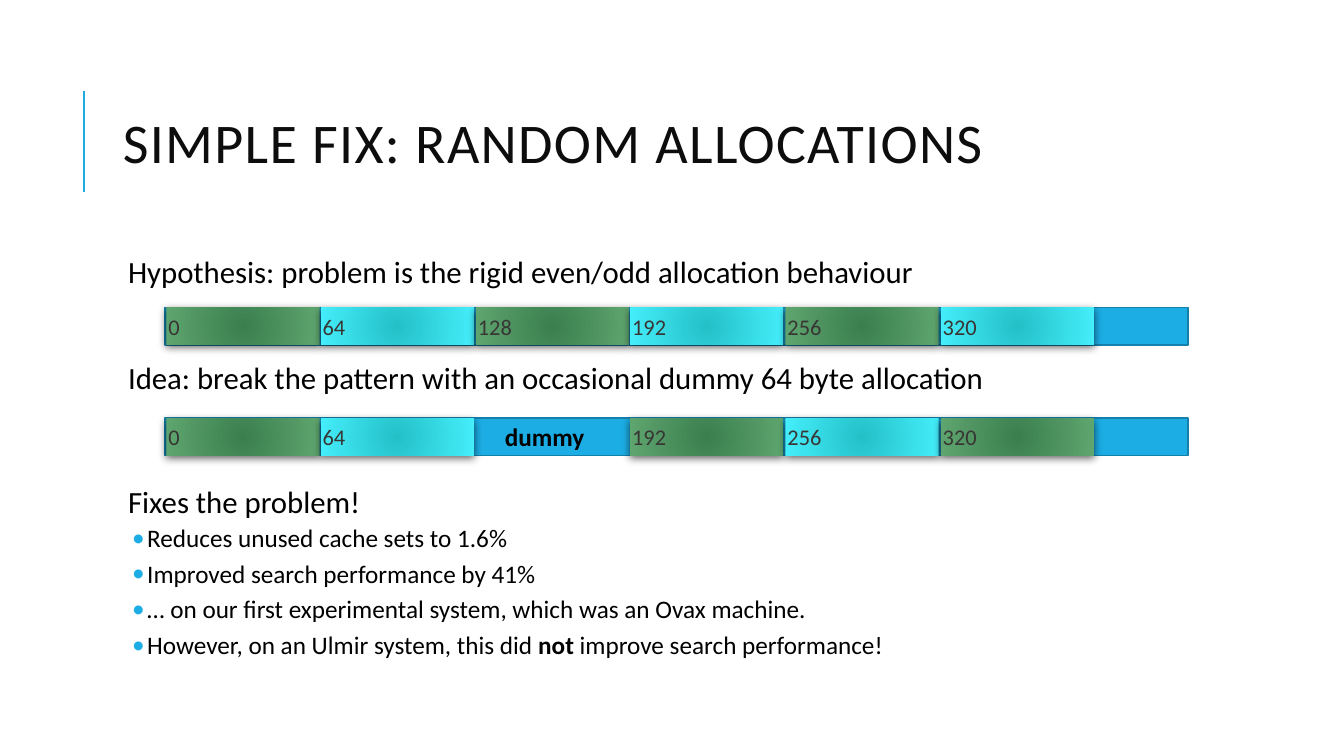
from dataclasses import dataclass
from itertools import cycle

from lxml import etree
from pptx import Presentation
from pptx.dml.color import RGBColor
from pptx.enum.shapes import MSO_CONNECTOR, MSO_SHAPE
from pptx.enum.text import MSO_ANCHOR, PP_ALIGN
from pptx.oxml import parse_xml
from pptx.oxml.ns import qn
from pptx.util import Pt

PX = 9144
STRAIGHT = MSO_CONNECTOR.STRAIGHT
RECTANGLE = MSO_SHAPE.RECTANGLE
MIDDLE = MSO_ANCHOR.MIDDLE
TOP = MSO_ANCHOR.TOP
LEFT = PP_ALIGN.LEFT
DRAWING = 'xmlns:a="http://schemas.openxmlformats.org/drawingml/2006/main"'


@dataclass(frozen=True)
class Theme:
    font: str = "Calibri"
    accent: str = "1CADE4"
    bar_line: str = "1580A9"
    title: str = "0D0D0D"
    body: str = "000000"
    label: str = "383635"
    even: tuple = ("3A7F4D", "5FA56F")
    odd: tuple = ("24C0C8", "44EEFA")
    title_size: int = 40
    statement_size: int = 22
    bullet_size: int = 18
    label_size: int = 16


THEME = Theme()


def px(*lengths):
    return [length * PX for length in lengths]


def style_runs(paragraph, size, color, bold=False):
    for run in paragraph.runs:
        run.font.name = THEME.font
        run.font.size = Pt(size)
        run.font.bold = bold
        run.font.color.rgb = RGBColor.from_string(color)


def set_margins(frame, left, top, right, bottom):
    frame.margin_left, frame.margin_top, frame.margin_right, frame.margin_bottom = px(
        left, top, right, bottom
    )


def add_text_box(slide, box, anchor=TOP):
    frame = slide.shapes.add_textbox(*px(*box)).text_frame
    frame.word_wrap = True
    frame.vertical_anchor = anchor
    return frame


def add_title(slide, box, text):
    left, top, width, height = box
    rule = slide.shapes.add_connector(
        STRAIGHT, *px(left - 29, top + 126, left - 29, top + 26)
    )
    rule.line.color.rgb = RGBColor.from_string(THEME.accent)
    rule.line.width = Pt(1.5)
    etree.SubElement(rule._element.spPr, qn("a:effectLst"))

    frame = add_text_box(slide, box, MIDDLE)
    frame.text = text
    paragraph = frame.paragraphs[0]
    paragraph.line_spacing = 0.8
    style_runs(paragraph, THEME.title_size, THEME.title)
    for run in paragraph.runs:
        run.font._element.set("spc", "100")


def set_indent(paragraph, margin, indent):
    properties = paragraph._p.get_or_add_pPr()
    properties.set("marL", str(margin * PX))
    properties.set("indent", str(indent * PX))
    return properties


def add_bullet(frame, pieces):
    paragraph = frame.add_paragraph()
    for piece in pieces:
        run = paragraph.add_run()
        run.text = piece
    style_runs(paragraph, THEME.bullet_size, THEME.body)
    for run in paragraph.runs[1::2]:
        run.font.bold = True
    paragraph.line_spacing = 0.9
    paragraph.space_before = Pt(2)
    paragraph.space_after = Pt(4)
    properties = set_indent(paragraph, 29, -15)
    color = etree.SubElement(properties, qn("a:buClr"))
    etree.SubElement(color, qn("a:srgbClr"), val=THEME.accent)
    etree.SubElement(properties, qn("a:buFont"), typeface=THEME.font)
    etree.SubElement(properties, qn("a:buChar"), char="•")


def add_statement(slide, box, text, bullets=()):
    frame = add_text_box(slide, box)
    set_margins(frame, 5, 5, 5, 5)
    frame.text = text
    paragraph = frame.paragraphs[0]
    paragraph.line_spacing = 0.9
    paragraph.space_after = Pt(2)
    set_indent(paragraph, 10, 0)
    style_runs(paragraph, THEME.statement_size, THEME.body)
    for pieces in bullets:
        add_bullet(frame, pieces)


def add_glow_fill(shape, colors):
    center, edge = colors
    properties = shape._element.spPr
    shape.line.fill.background()
    gradient = parse_xml(
        f'<a:gradFill {DRAWING} rotWithShape="1"><a:gsLst>'
        f'<a:gs pos="0"><a:srgbClr val="{center}"/></a:gs>'
        f'<a:gs pos="100000"><a:srgbClr val="{edge}"/></a:gs></a:gsLst>'
        '<a:path path="circle"><a:fillToRect l="50000" t="50000" r="50000" b="50000"/>'
        "</a:path></a:gradFill>"
    )
    properties.find(qn("a:prstGeom")).addnext(gradient)
    shadow = parse_xml(
        f'<a:effectLst {DRAWING}><a:outerShdw blurRad="{Pt(6)}" dist="{Pt(2)}" '
        'dir="5400000" rotWithShape="0"><a:srgbClr val="000000">'
        '<a:alpha val="60000"/></a:srgbClr></a:outerShdw></a:effectLst>'
    )
    properties.find(qn("a:ln")).addnext(shadow)


def add_block(slide, box, label, colors):
    block = slide.shapes.add_shape(RECTANGLE, *px(*box))
    add_glow_fill(block, colors)
    frame = block.text_frame
    set_margins(frame, 2, 5, 10, 5)
    frame.vertical_anchor = MIDDLE
    frame.text = label
    paragraph = frame.paragraphs[0]
    paragraph.alignment = LEFT
    style_runs(paragraph, THEME.label_size, THEME.label)


def add_memory_bar(slide, box, labels):
    left, top, width, height = box
    bar = slide.shapes.add_shape(RECTANGLE, *px(*box))
    bar.shadow.inherit = False
    bar.fill.solid()
    bar.fill.fore_color.rgb = RGBColor.from_string(THEME.accent)
    bar.line.color.rgb = RGBColor.from_string(THEME.bar_line)
    bar.line.width = Pt(1.25)

    colors = cycle((THEME.even, THEME.odd))
    for index, label in enumerate(labels):
        block_left = left + 1 + 768 * index // 5
        if label.isdigit():
            add_block(slide, (block_left, top, 152, height), label, next(colors))
        else:
            frame = add_text_box(slide, (block_left + 19, top - 2, 112, 40))
            frame.text = label
            style_runs(frame.paragraphs[0], THEME.bullet_size, THEME.body, bold=True)


def build_slide(presentation):
    slide = presentation.slides.add_slide(presentation.slide_layouts[6])
    add_title(slide, (112, 64, 1063, 164), "SIMPLE FIX: RANDOM ALLOCATIONS")
    add_statement(
        slide,
        (112, 250, 1085, 44),
        "Hypothesis: problem is the rigid even/odd allocation behaviour",
    )
    add_statement(
        slide,
        (112, 355, 1085, 44),
        "Idea: break the pattern with an occasional dummy 64 byte allocation",
    )
    add_statement(
        slide,
        (112, 478, 1085, 246),
        "Fixes the problem!",
        (
            ["Reduces unused cache sets to 1.6%"],
            ["Improved search performance by 41%"],
            ["… on our first experimental system, which was an Ovax machine."],
            ["However, on an Ulmir system, this did ", "not", " improve search performance!"],
        ),
    )
    add_memory_bar(slide, (164, 415, 1014, 37), ("0", "64", "dummy", "192", "256", "320"))
    add_memory_bar(slide, (164, 305, 1014, 37), ("0", "64", "128", "192", "256", "320"))


def main():
    presentation = Presentation()
    presentation.slide_width, presentation.slide_height = px(1333, 750)
    build_slide(presentation)
    presentation.save("out.pptx")


if __name__ == "__main__":
    main()
